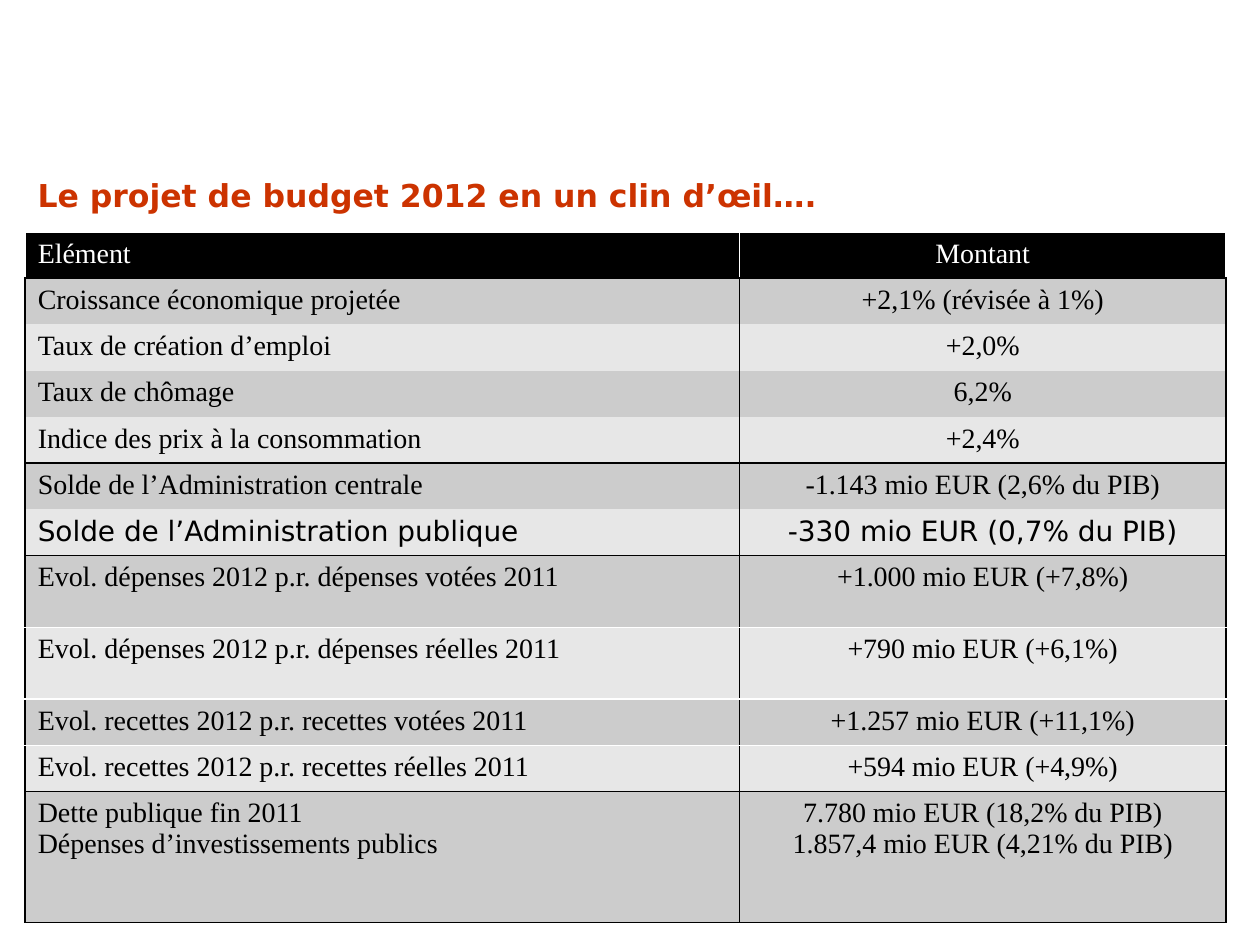
from lxml.etree import SubElement
from pptx import Presentation
from pptx.dml.color import RGBColor
from pptx.enum.text import MSO_ANCHOR as Anchor, PP_ALIGN as Align
from pptx.oxml.ns import qn
from pptx.util import Inches, Pt

BLACK, WHITE = "000000", "FFFFFF"
DARK, LIGHT = "CCCCCC", "E7E7E7"
SERIF, SANS = "Times New Roman", "DejaVu Sans"
LINE_HEIGHT = 3.2 / 9

BUDGET = [
    ("Elément", "Montant", LINE_HEIGHT, WHITE),
    ("Croissance économique projetée", "+2,1% (révisée à 1%)", LINE_HEIGHT, BLACK),
    ("Taux de création d’emploi", "+2,0%", LINE_HEIGHT, None),
    ("Taux de chômage", "6,2%", LINE_HEIGHT, None),
    ("Indice des prix à la consommation", "+2,4%", LINE_HEIGHT, None),
    ("Solde de l’Administration centrale", "-1.143 mio EUR (2,6% du PIB)", LINE_HEIGHT, BLACK),
    ("Solde de l’Administration publique", "-330 mio EUR (0,7% du PIB)", LINE_HEIGHT, None),
    ("Evol. dépenses 2012 p.r. dépenses votées 2011", "+1.000 mio EUR (+7,8%)", 0.57, BLACK),
    ("Evol. dépenses 2012 p.r. dépenses réelles 2011", "+790 mio EUR (+6,1%)", 0.57, WHITE),
    ("Evol. recettes 2012 p.r. recettes votées 2011", "+1.257 mio EUR (+11,1%)", LINE_HEIGHT, WHITE),
    ("Evol. recettes 2012 p.r. recettes réelles 2011", "+594 mio EUR (+4,9%)", LINE_HEIGHT, WHITE),
    ("Dette publique fin 2011\nDépenses d’investissements publics",
     "7.780 mio EUR (18,2% du PIB)\n1.857,4 mio EUR (4,21% du PIB)", 1.04, BLACK),
]
PUBLIC_BALANCE = 6


def rgb(value):
    return RGBColor.from_string(value)


class SlideBuilder:
    def __init__(self, slide):
        self.slide = slide

    def add_lines(self, frame, text, size, font, color, align=Align.LEFT, bold=False):
        for index, line in enumerate(text.split("\n")):
            paragraph = frame.add_paragraph() if index else frame.paragraphs[0]
            paragraph.alignment = align
            run = paragraph.add_run()
            run.text = line
            run.font.size = Pt(size)
            run.font.name = font
            run.font.bold = bold
            run.font.color.rgb = rgb(color)

    def title(self, text, left, top, width, height):
        box = self.slide.shapes.add_textbox(
            Inches(left), Inches(top), Inches(width), Inches(height))
        frame = box.text_frame
        frame.word_wrap = True
        frame.vertical_anchor = Anchor.MIDDLE
        self.add_lines(frame, text, 18, SANS, "CC3300", bold=True)

    def borders(self, cell, side, top, bottom):
        properties = cell._tc.get_or_add_tcPr()
        for tag, color in (("a:lnL", side), ("a:lnR", side), ("a:lnT", top), ("a:lnB", bottom)):
            line = SubElement(properties, qn(tag), w=str(Pt(1)))
            if color:
                fill = SubElement(line, qn("a:solidFill"))
                SubElement(fill, qn("a:srgbClr"), val=color)
            else:
                SubElement(line, qn("a:noFill"))

    def table(self, rows, left, top, widths):
        height = sum(row[2] for row in rows)
        table = self.slide.shapes.add_table(
            len(rows), len(widths), Inches(left), Inches(top),
            Inches(sum(widths)), Inches(height)).table
        for column, width in zip(table.columns, widths):
            column.width = Inches(width)
        rules = [row[3] for row in rows] + [BLACK]
        for r, (element, amount, row_height, _) in enumerate(rows):
            table.rows[r].height = Inches(row_height)
            header = r == 0
            background = BLACK if header else DARK if r % 2 else LIGHT
            ink = WHITE if header else BLACK
            font = SANS if r == PUBLIC_BALANCE else SERIF
            for c, (text, align) in enumerate(((element, Align.LEFT), (amount, Align.CENTER))):
                cell = table.cell(r, c)
                self.borders(cell, ink, rules[r], rules[r + 1])
                cell.fill.solid()
                cell.fill.fore_color.rgb = rgb(background)
                self.add_lines(cell.text_frame, text, 16, font, ink, align)


def main():
    deck = Presentation()
    deck.slide_width, deck.slide_height = Inches(10), Inches(7.5)
    builder = SlideBuilder(deck.slides.add_slide(deck.slide_layouts[6]))
    builder.title("Le projet de budget 2012 en un clin d’œil….", 0.2, 1.23, 9.8, 0.63)
    builder.table(BUDGET, 0.2, 1.84, (5.67, 3.86))
    deck.save("out.pptx")


if __name__ == "__main__":
    main()
